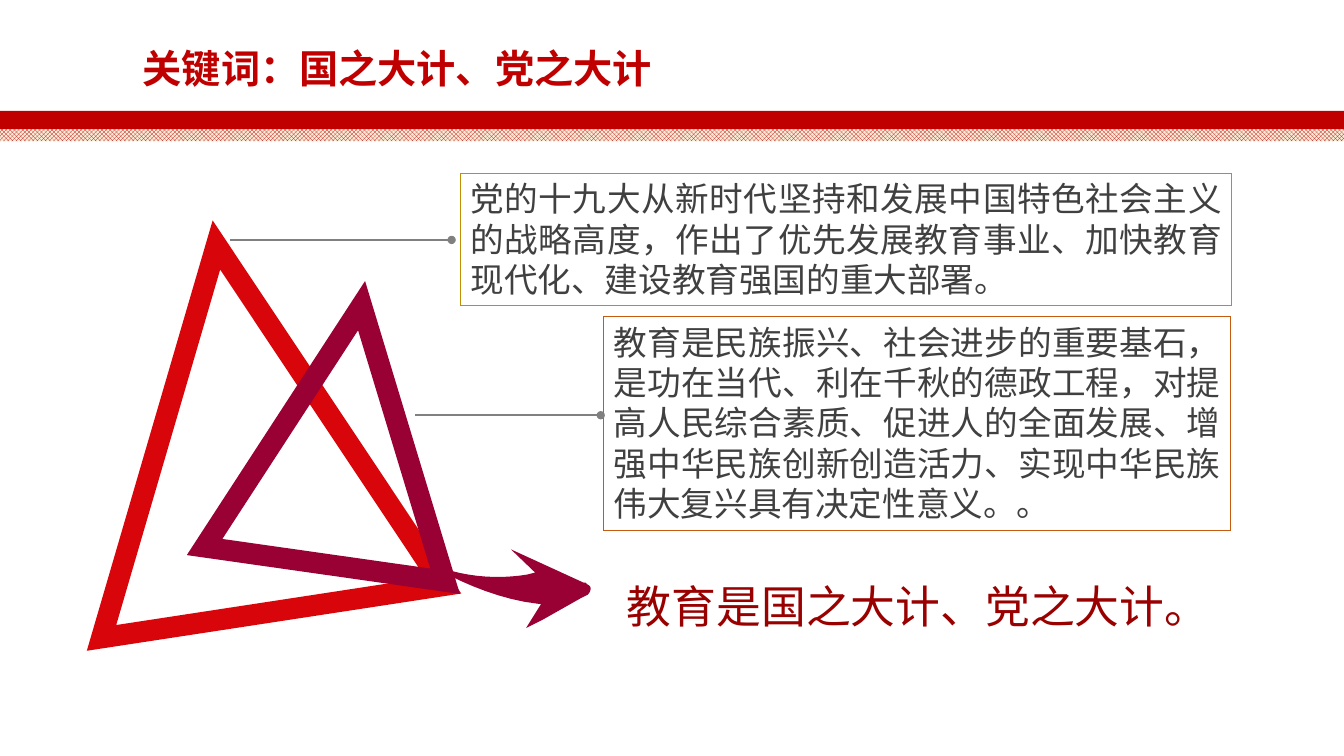
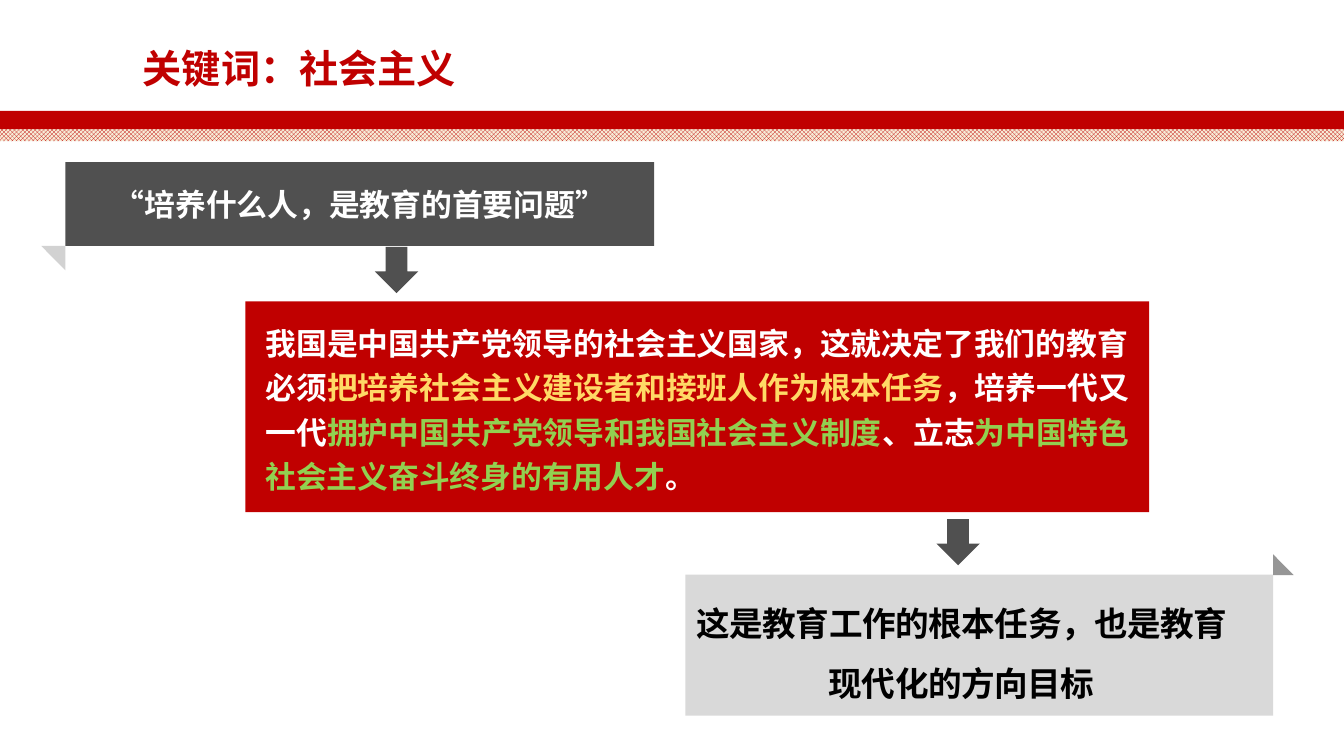
import pptx
import pptx.util
import pptx.dml.color
import pptx.enum.dml
import pptx.enum.shapes
import pptx.enum.text
import pptx.oxml.ns
import lxml.etree

Pt = pptx.util.Pt
RGBColor = pptx.dml.color.RGBColor
SHAPE = pptx.enum.shapes.MSO_SHAPE
ALIGN = pptx.enum.text.PP_ALIGN
ANCHOR = pptx.enum.text.MSO_ANCHOR
qn = pptx.oxml.ns.qn

RED = RGBColor(0xC0, 0x00, 0x00)
CREAM = RGBColor(0xF7, 0xED, 0xD8)
BRIGHT_RED = RGBColor(0xD8, 0x06, 0x0A)
CRIMSON = RGBColor(0x99, 0x00, 0x33)
DEEP_RED = RGBColor(0x99, 0x00, 0x00)
GOLD = RGBColor(0xBF, 0x90, 0x00)
ORANGE = RGBColor(0xC5, 0x5A, 0x11)
YELLOW = RGBColor(0xFF, 0xD9, 0x66)
GREEN = RGBColor(0x92, 0xD0, 0x50)
WHITE = RGBColor(0xFF, 0xFF, 0xFF)
BLACK = RGBColor(0x00, 0x00, 0x00)
INK = RGBColor(0x40, 0x40, 0x40)
CHARCOAL = RGBColor(0x50, 0x50, 0x50)
GRAY = RGBColor(0x80, 0x80, 0x80)
FOLD_DARK = RGBColor(0x96, 0x96, 0x96)
FOLD_LIGHT = RGBColor(0xD2, 0xD2, 0xD2)
PANEL = RGBColor(0xD9, 0xD9, 0xD9)

SC = "Noto Sans CJK SC"
JP = "Noto Sans CJK JP"
INSETS = (7.2, 3.6, 7.2, 3.6)

TRIANGLES = [
    ((51.1, 173.5, 247, 265), 351.3, BRIGHT_RED),
    ((158.4, 217.4, 173.5, 186.5), 8.1, CRIMSON),
]
STATEMENTS = [
    ((329, 123.8, 551, 94.4), GOLD,
     "党的十九大从新时代坚持和发展中国特色社会主义的战略高度，作出了优先发展教育事业、"
     "加快教育现代化、建设教育强国的重大部署。"),
    ((431.3, 226.1, 447.8, 152.6), ORANGE,
     "教育是民族振兴、社会进步的重要基石，是功在当代、利在千秋的德政工程，对提高人民综合素质、"
     "促进人的全面发展、增强中华民族创新创造活力、实现中华民族伟大复兴具有决定性意义。。"),
]
LEADERS = [(164.2, 322.6, 171.4), (296.6, 429.1, 296.6)]
CONCLUSION = "教育是国之大计、党之大计。"
SWOOSH_START = (419.8, 417.6)
SWOOSH = [
    [(421.2, 418.3), (421.9, 419), (421.9, 420.5)],
    [(421.9, 421.9), (421.2, 423.4), (419.8, 424.8)],
    [(415.4, 427)], [(387.4, 442.8)], [(375.8, 448.6)], [(386.6, 431.3)], [(384.5, 431.3)],
    [(344.9, 427), (307.4, 403.9), (302.4, 400.3)],
    [(327.6, 412.6), (355, 414), (376.6, 410.4)],
    [(382.3, 409)], [(365, 392.4)], [(416.9, 416.2)], [(418.3, 416.2)],
]

QUESTION = "“培养什么人，是教育的首要问题”"
ANSWER = [
    ("我国是中国共产党领导的社会主义国家，这就决定了我们的教育必须", WHITE),
    ("把培养社会主义建设者和接班人作为根本任务", YELLOW),
    ("，培养一代又一代", WHITE),
    ("拥护中国共产党领导和我国社会主义制度", GREEN),
    ("、立志", WHITE),
    ("为中国特色社会主义奋斗终身的有用人才", GREEN),
    ("。", WHITE),
]
GOAL = "这是教育工作的根本任务，也是教育现代化的方向目标"
DOWN_ARROWS = [(267.8, 176.4), (668.9, 370.8)]


def write(box, text, size, color=BLACK, font=SC, bold=False, align=ALIGN.LEFT,
          spacing=None, anchor=ANCHOR.TOP, insets=INSETS, tracking=None):
    frame = box.text_frame
    frame.word_wrap = True
    frame.auto_size = pptx.enum.text.MSO_AUTO_SIZE.NONE
    frame.vertical_anchor = anchor
    (frame.margin_left, frame.margin_top,
     frame.margin_right, frame.margin_bottom) = [Pt(inset) for inset in insets]
    para = frame.paragraphs[0]
    para.alignment = align
    if spacing:
        para.line_spacing = spacing
    for words, tint in [(text, color)] if isinstance(text, str) else text:
        span = para.add_run()
        span.text = words
        span.font.size = Pt(size)
        span.font.bold = bold
        span.font.color.rgb = tint
        span.font.name = font
        properties = span.font._element
        east_asian = lxml.etree.SubElement(properties, qn("a:ea"))
        east_asian.set("typeface", font if font == JP else SC)
        if tracking:
            properties.set("spc", str(tracking))


def paint(shape, fill=None, line=None, width=0.75):
    shape.shadow.inherit = False
    if fill is None:
        shape.fill.background()
    else:
        shape.fill.solid()
        shape.fill.fore_color.rgb = fill
    if line is None:
        shape.line.fill.background()
    else:
        shape.line.color.rgb = line
        shape.line.width = Pt(width)
        outline = shape.element.spPr.find(qn("a:ln"))
        lxml.etree.SubElement(outline, qn("a:miter")).set("lim", "800000")
    return shape


def add_block(shapes, place, kind=SHAPE.RECTANGLE, **look):
    return paint(shapes.add_shape(kind, *[Pt(value) for value in place]), **look)


def add_text(shapes, place, text, **style):
    box = shapes.add_textbox(*[Pt(value) for value in place])
    write(box, text, **style)


def add_outline(shapes, points, fill):
    corners = [(Pt(x), Pt(y)) for x, y in points]
    builder = shapes.build_freeform(*corners[0], scale=1.0)
    builder.add_line_segments(corners[1:], close=True)
    return paint(builder.convert_to_shape(), fill=fill)


def flatten(start, segments, steps=12):
    points = [start]
    for segment in segments:
        if len(segment) == 1:
            points += segment
            continue
        corners = [points[-1], *segment]
        for step in range(1, steps + 1):
            t = step / steps
            weights = ((1 - t) ** 3, 3 * t * (1 - t) ** 2, 3 * t * t * (1 - t), t ** 3)
            points.append(tuple(
                sum(weight * corner[axis] for weight, corner in zip(weights, corners))
                for axis in (0, 1)))
    return points


def add_leader(shapes, left, right, y):
    leader = shapes.add_connector(pptx.enum.shapes.MSO_CONNECTOR.STRAIGHT,
                                  Pt(left), Pt(y), Pt(right), Pt(y))
    leader.line.color.rgb = GRAY
    leader.line.width = Pt(1.5)
    properties = leader.element.spPr
    lxml.etree.SubElement(properties.find(qn("a:ln")), qn("a:tailEnd")).set("type", "oval")
    lxml.etree.SubElement(properties, qn("a:effectLst"))


def add_page(deck, title):
    page = deck.slides.add_slide(deck.slide_layouts[6])
    trellis = add_block(page.shapes, (0, 91.5, 960, 9.4))
    trellis.fill.patterned()
    trellis.fill.pattern = pptx.enum.dml.MSO_PATTERN.TRELLIS
    trellis.fill.fore_color.rgb = RED
    trellis.fill.back_color.rgb = CREAM
    add_block(page.shapes, (0, 79.2, 960, 13), fill=RED)
    add_text(page.shapes, (95, 31.7, 402, 35.3), title,
             size=28, color=RED, bold=True, spacing=0.9)
    return page.shapes


def build_plan(deck):
    shapes = add_page(deck, "关键词：国之大计、党之大计")
    add_outline(shapes, flatten(SWOOSH_START, SWOOSH), CRIMSON)
    for place, angle, color in TRIANGLES:
        triangle = add_block(shapes, place, SHAPE.ISOSCELES_TRIANGLE, line=color, width=15)
        triangle.rotation = angle
    for place, color, text in STATEMENTS:
        box = add_block(shapes, place, line=color)
        write(box, text, size=24, color=INK, align=ALIGN.JUSTIFY)
    for leader in LEADERS:
        add_leader(shapes, *leader)
    add_text(shapes, (430.6, 400.3, 450.7, 52.6), CONCLUSION, size=32, color=DEEP_RED,
             font=JP, align=ALIGN.CENTER, spacing=1.25)


def build_socialism(deck):
    shapes = add_page(deck, "关键词：社会主义")
    question = add_block(shapes, (46.8, 115.9, 420.5, 59.8), fill=CHARCOAL)
    write(question, QUESTION, size=22, color=WHITE, font="Lato", bold=True,
          align=ALIGN.CENTER, anchor=ANCHOR.MIDDLE, insets=(5.8, 2.9, 5.8, 2.9))
    answer = add_block(shapes, (175.2, 215.2, 645.6, 150.6), fill=RED)
    write(answer, ANSWER, size=22, font="Lato", bold=True, align=ALIGN.JUSTIFY,
          spacing=1.2, insets=(14.4, 11.5, 14.4, 11.5))
    for left, top in DOWN_ARROWS:
        add_block(shapes, (left, top, 31, 33), SHAPE.DOWN_ARROW, fill=CHARCOAL)
    add_outline(shapes, [(46.8, 193.2), (46.8, 175.7), (29.5, 175.7)], FOLD_LIGHT)
    goal = shapes.add_group_shape().shapes
    add_block(goal, (489.6, 410.4, 419.8, 100.8), fill=PANEL)
    add_text(goal, (496.8, 418.3, 401.8, 99.4), GOAL, size=24, font="Arial", bold=True,
             align=ALIGN.CENTER, spacing=1.5, anchor=ANCHOR.MIDDLE,
             insets=(0, 0, 21.6, 17.3), tracking=-30)
    add_outline(goal, [(909.4, 396), (909.4, 410.8), (924, 410.8)], FOLD_DARK)


def main():
    deck = pptx.Presentation()
    deck.slide_width, deck.slide_height = Pt(960), Pt(540)
    build_plan(deck)
    build_socialism(deck)
    deck.save("out.pptx")


if __name__ == "__main__":
    main()
